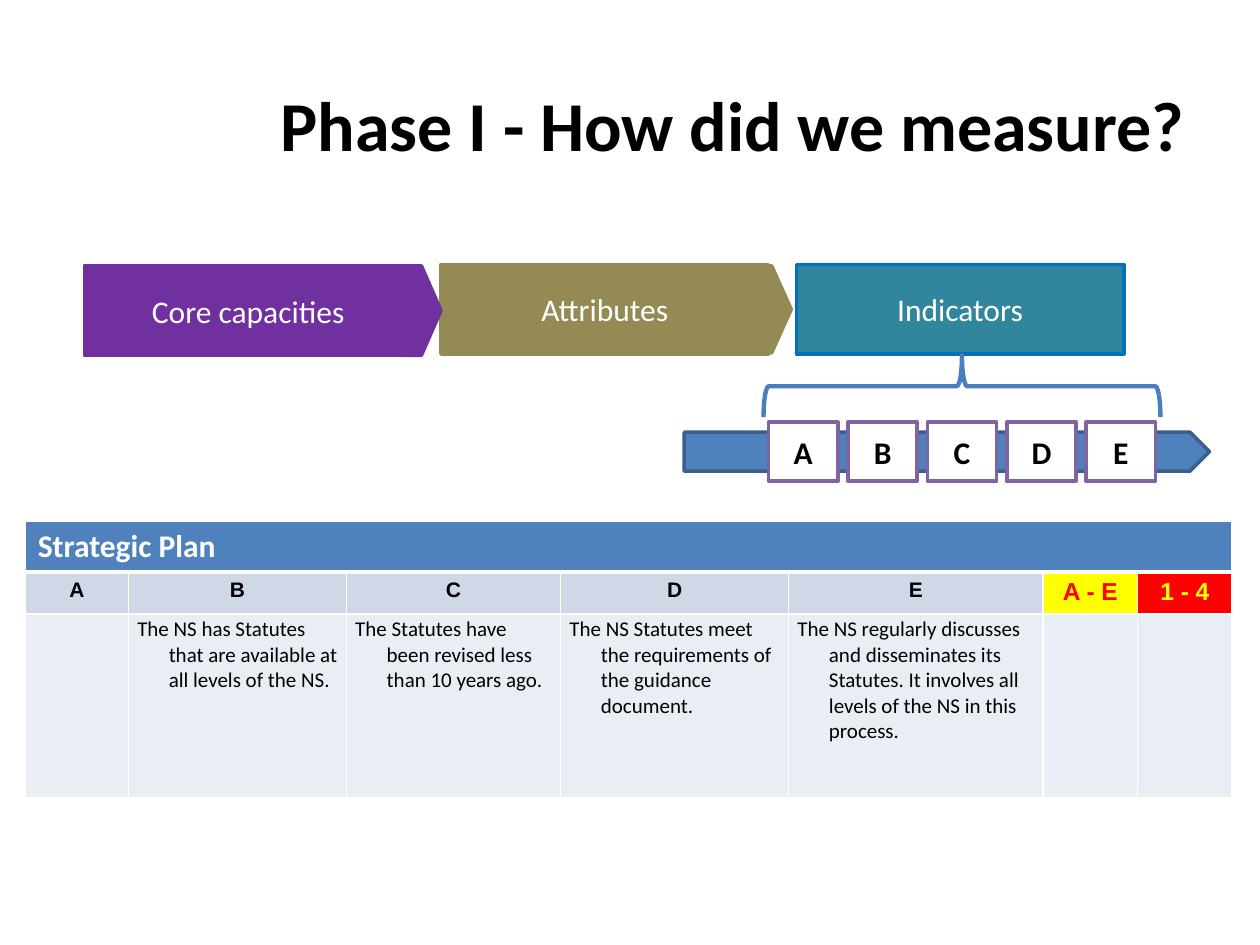
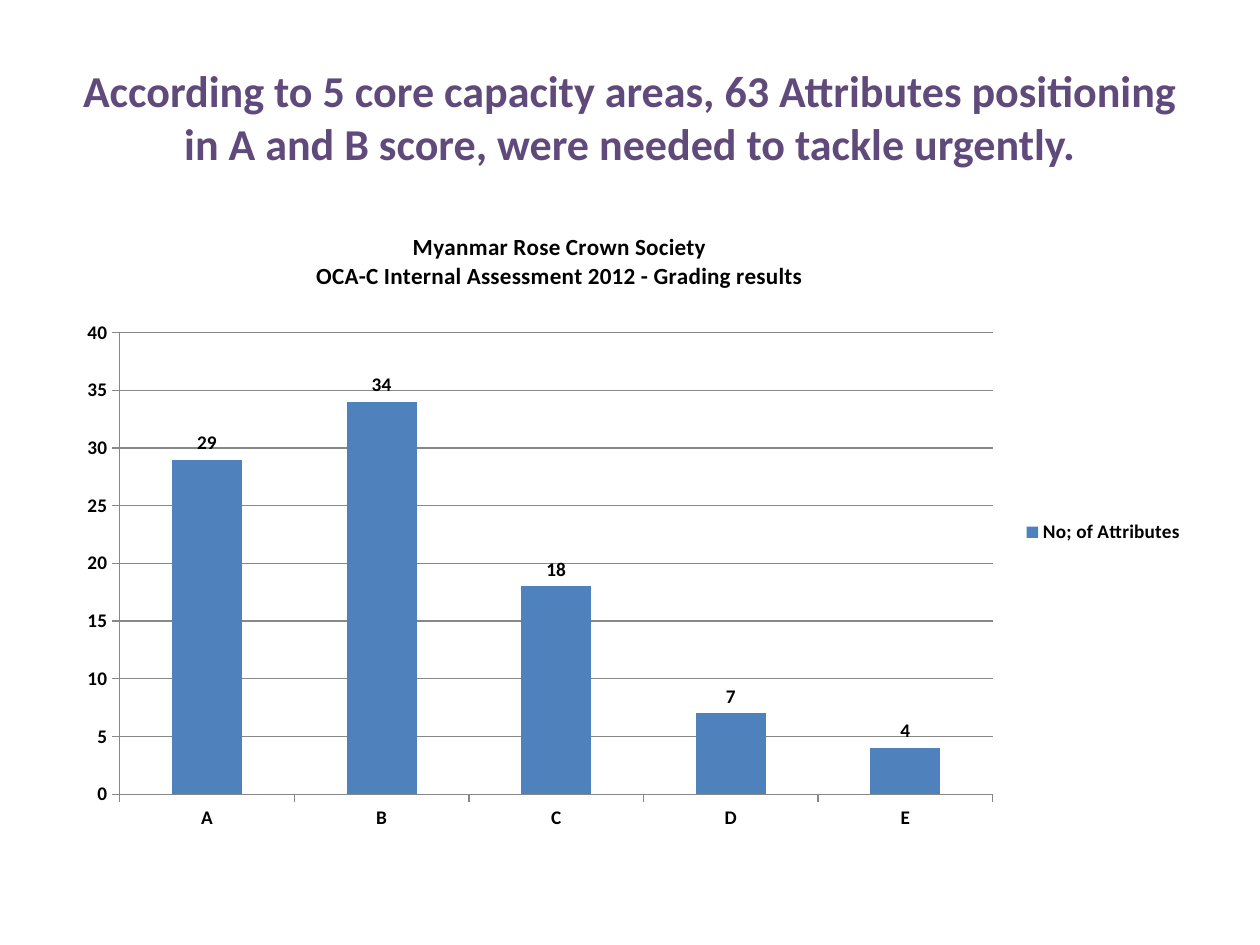
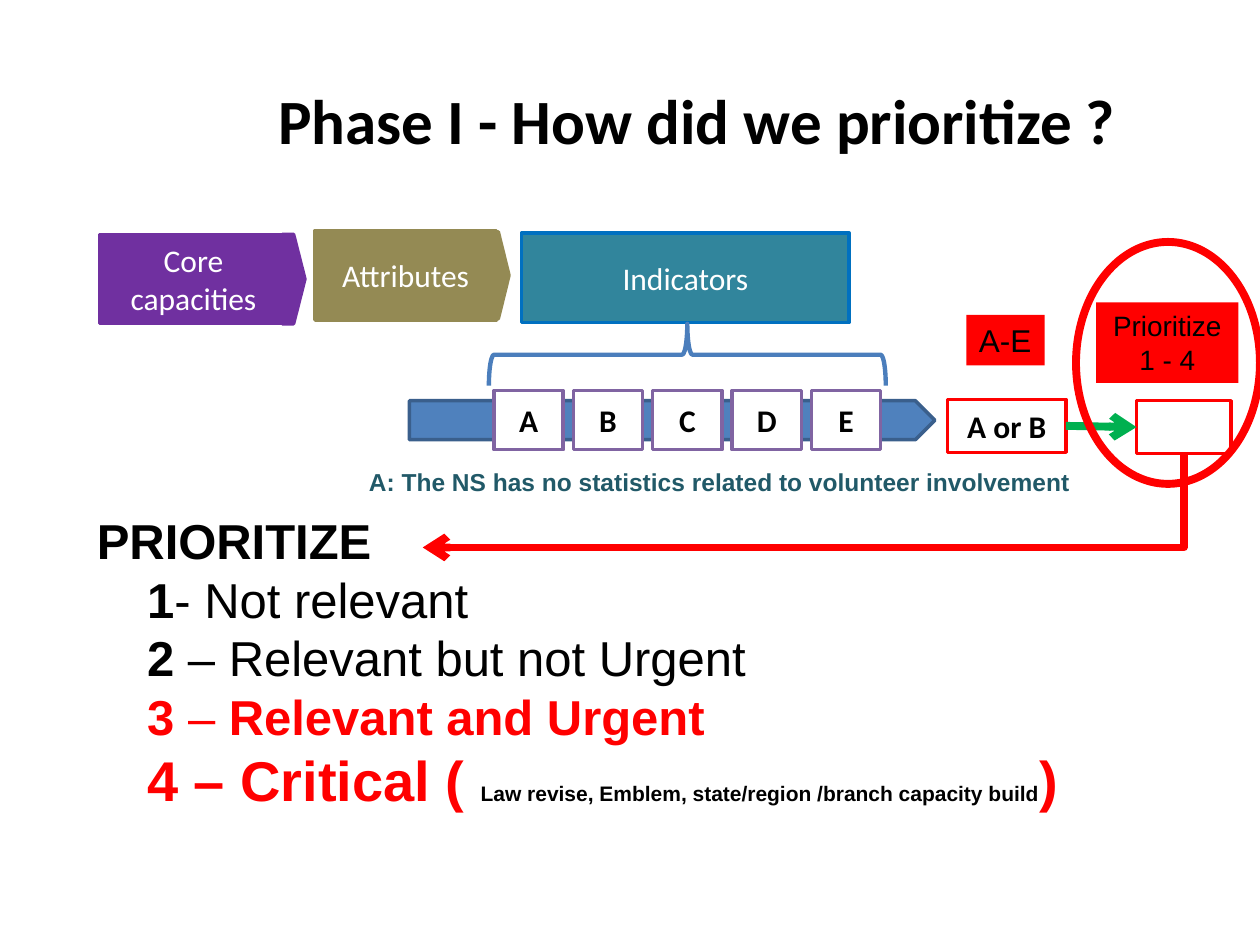
from lxml import etree
from pptx import Presentation
from pptx import util as u
from pptx.chart.data import CategoryChartData
from pptx.dml.color import RGBColor
from pptx.enum import chart as ch, shapes, text
from pptx.oxml import parse_xml
from pptx.oxml.ns import nsdecls, qn

# Shared style
BLACK, WHITE, RED, YELLOW = "000000", "FFFFFF", "FF0000", "FFFF00"
BLUE, NAVY, BRACE, GREY = "4F81BD", "3A5F8C", "4B7EBC", "878787"
PURPLE, OLIVE, TEAL, SKY = "7030A0", "948A54", "31859C", "0070C0"
VIOLET, PLUM, GREEN, DARK_TEAL = "8064A2", "604A7B", "00B050", "215968"
HEAD_FILL, BODY_FILL = "D0D8E8", "E9EDF4"
SANS, ARIAL = "Calibri", "Arial"
GRADES = "ABCDE"
MSO = shapes.MSO_SHAPE
CENTER, LEFT = text.PP_ALIGN.CENTER, text.PP_ALIGN.LEFT
TOP, MIDDLE = text.MSO_ANCHOR.TOP, text.MSO_ANCHOR.MIDDLE

# The grid has 100 columns and 75 rows on a 10 by 7.5 inch slide
COLS, ROWS = 100, 75
CELL = u.Inches(10) / COLS
STEP_H = 7.1


def grid(*lengths):
    return [u.Emu(round(n * CELL)) for n in lengths]


def rgb(value):
    return RGBColor.from_string(value)


def style_font(font, size, color=BLACK, bold=False, name=SANS):
    font.size, font.bold, font.name = u.Pt(size), bold, name
    font.color.rgb = rgb(color)


def indent(p, left, first=0):
    pPr = p._p.get_or_add_pPr()
    for key, n in (("marL", left), ("indent", first)):
        pPr.set(key, str(grid(n)[0]))


def cell_borders(cell, bottom=1):
    tcPr = cell._tc.get_or_add_tcPr()
    for i, (side, width) in enumerate(zip("LRTB", (1, 1, 1, bottom))):
        tcPr.insert(i, parse_xml(
            f'<a:ln{side} {nsdecls("a")} w="{u.Pt(width)}"><a:solidFill>'
            f'<a:srgbClr val="{WHITE}"/></a:solidFill></a:ln{side}>'))


def chart_layout(parent, index, inner=False, **shares):
    for old in parent.findall(qn("c:layout")):
        parent.remove(old)
    layout = etree.Element(qn("c:layout"))
    manual = etree.SubElement(layout, qn("c:manualLayout"))
    if inner:
        etree.SubElement(manual, qn("c:layoutTarget")).set("val", "inner")
    for key in "xy":
        etree.SubElement(manual, qn(f"c:{key}Mode")).set("val", "edge")
    for key, share in shares.items():
        etree.SubElement(manual, qn(f"c:{key}")).set("val", str(share))
    parent.insert(index, layout)


class Deck:
    def __init__(self):
        self.prs = Presentation()
        self.prs.slide_width, self.prs.slide_height = grid(COLS, ROWS)
        self.s = None

    def new_slide(self):
        self.s = self.prs.slides.add_slide(self.prs.slide_layouts[6])

    # Basic elements
    def shape(self, kind, x, y, w, h, fill=None, line=None, width=2):
        sp = self.s.shapes.add_shape(kind, *grid(x, y, w, h))
        sp.shadow.inherit = False
        if fill:
            sp.fill.solid()
            sp.fill.fore_color.rgb = rgb(fill)
        else:
            sp.fill.background()
        if line:
            sp.line.color.rgb = rgb(line)
            sp.line.width = u.Pt(width)
        else:
            sp.line.fill.background()
        return sp

    def label(self, sp, lines, size, color=BLACK, bold=False, name=SANS,
              align=CENTER, anchor=MIDDLE, wrap=True):
        tf = sp.text_frame
        tf.word_wrap, tf.vertical_anchor = wrap, anchor
        for i, line in enumerate(lines.split("\n")):
            p = tf.add_paragraph() if i else tf.paragraphs[0]
            p.text, p.alignment = line, align
            style_font(p.font, size, color, bold, name)

    def text_box(self, x, y, w, h):
        return self.s.shapes.add_textbox(*grid(x, y, w, h))

    def title(self, words, x, w, h, size):
        self.label(self.text_box(x, 6, w, h), words, size, bold=True,
                   align=LEFT, anchor=TOP, wrap=False)

    def arrow(self, kind, ends, color):
        sp = self.s.shapes.add_connector(kind, *grid(*ends))
        sp.line.color.rgb, sp.line.width = rgb(color), u.Pt(4.5)
        spPr = sp._element.spPr
        etree.SubElement(spPr.find(qn("a:ln")), qn("a:tailEnd")).set("type", "arrow")
        etree.SubElement(spPr, qn("a:effectLst"))
        return sp

    # Diagram parts
    def step(self, words, color, x, y, w, tip_x, tip_w, tip_h=STEP_H):
        body = self.shape(MSO.RECTANGLE, x, y, w, STEP_H, color, color)
        self.label(body, words, 18, WHITE)
        self.shape(MSO.PENTAGON, tip_x, y + (STEP_H - tip_h) / 2, tip_w, tip_h,
                   color, color)

    def grade_scale(self, x, y):
        """Indicators, a brace and the grades; x, y is the corner of grade A."""
        box_w, pitch = 5.5, 6.3
        center = x + (pitch * (len(GRADES) - 1) + box_w) / 2
        self.shape(MSO.PENTAGON, x - 6.7, y + 0.8, 41.7, 3.1, BLUE, NAVY)
        head = self.shape(MSO.RECTANGLE, x + 2.2, y - 12.5, 26, STEP_H, TEAL, SKY)
        self.label(head, "Indicators", 18, WHITE)
        for i, grade in enumerate(GRADES):
            box = self.shape(MSO.RECTANGLE, x + i * pitch, y, box_w, 4.7,
                             WHITE, VIOLET)
            self.label(box, grade, 18, bold=True)
        brace_w, brace_h = 4.9, 31.5
        brace = self.shape(MSO.RIGHT_BRACE, center - brace_w / 2,
                           y - 2.85 - brace_h / 2, brace_w, brace_h,
                           line=BRACE, width=2.5)
        brace.rotation = 270

    def table(self, x, y, widths, heights):
        frame = self.s.shapes.add_table(len(heights), len(widths),
                                        *grid(x, y, sum(widths), sum(heights)))
        table = frame.table
        table.first_row = table.horz_banding = False
        for column, length in zip(table.columns, grid(*widths)):
            column.width = length
        for row, length in zip(table.rows, grid(*heights)):
            row.height = length
        return table

    def cell(self, cell, words, fill, size=12, color=BLACK, bold=True,
             name=ARIAL, align=CENTER, bottom=1):
        cell.fill.solid()
        cell.fill.fore_color.rgb = rgb(fill)
        cell_borders(cell, bottom)
        if words:
            self.label(cell, words, size, color, bold, name, align, TOP)

    def column_chart(self, x, y, w, h, title, name, cats, vals):
        data = CategoryChartData()
        data.categories = cats
        data.add_series(name, vals)
        chart = self.s.shapes.add_chart(ch.XL_CHART_TYPE.COLUMN_CLUSTERED,
                                        *grid(x, y, w, h), data).chart
        style_font(chart.font, 11, bold=True)
        chart.has_title = chart.has_legend = True
        self.label(chart.chart_title, title, 13.2, bold=True)
        chart.legend.position = ch.XL_LEGEND_POSITION.RIGHT
        chart.legend.include_in_layout = False
        plot = chart.plots[0]
        plot.vary_by_categories, plot.gap_width = False, 150
        fill = plot.series[0].format.fill
        fill.solid()
        fill.fore_color.rgb = rgb(BLUE)
        plot.has_data_labels = True
        plot.data_labels.show_value = True
        plot.data_labels.position = ch.XL_LABEL_POSITION.OUTSIDE_END
        axes = chart.category_axis, chart.value_axis
        for axis in axes:
            axis.major_tick_mark = ch.XL_TICK_MARK.OUTSIDE
        for lined in (*axes, chart.value_axis.major_gridlines):
            lined.format.line.color.rgb = rgb(GREY)
        chart_layout(chart.chart_title._element, 1, x=0.22, y=0.01)
        area = chart._chartSpace.find(f".//{qn('c:plotArea')}")
        chart_layout(area, 0, inner=True, x=0.05, y=0.18, w=0.77, h=0.74)


def measure_slide(deck):
    deck.new_slide()
    deck.title("Phase I - How did we measure?", 21.3, 74.4, 7.7, 40)

    # Strategic plan table
    table = deck.table(2, 41.4, [8.2, 17.3, 17, 18.1, 20.2, 7.5, 7.5],
                       [3.75, 3.2, 14.6])
    table.cell(0, 0).merge(table.cell(0, 6))
    for i in range(7):
        deck.cell(table.cell(0, i), "" if i else "Strategic Plan", BLUE, 18, WHITE,
                  name=SANS, align=LEFT, bottom=3)
    for i, grade in enumerate(GRADES):
        deck.cell(table.cell(1, i), grade, HEAD_FILL)
    deck.cell(table.cell(1, 5), "A - E", YELLOW, 14, RED)
    deck.cell(table.cell(1, 6), "1 - 4", RED, 14, YELLOW)
    statutes = [
        "",
        "The NS has Statutes that are available at all levels of the NS.",
        "The Statutes have been revised less than 10 years ago.",
        "The NS Statutes meet the requirements of the guidance document.",
        "The NS regularly discusses and disseminates its Statutes. "
        "It involves all levels of the NS in this process.",
        "", ""]
    for i, words in enumerate(statutes):
        cell = table.cell(2, i)
        deck.cell(cell, words, BODY_FILL, bold=False, name=SANS, align=LEFT)
        if words:
            (cell.margin_left, cell.margin_top, cell.margin_right,
             cell.margin_bottom) = grid(0.7, 0.2, 0.7, 0)
            indent(cell.text_frame.paragraphs[0], 2.5, -2.5)

    # From capacities to indicators
    deck.step("Attributes", OLIVE, 35, 21, 26, 59.7, 3.1, 6.9)
    deck.step("Core capacities", PURPLE, 6.7, 21.1, 26, 31.9, 3.1)
    deck.grade_scale(61, 33.5)


def results_slide(deck):
    deck.new_slide()
    deck.label(deck.text_box(5, 3, 90, 12.5),
               "According to 5 core capacity areas, 63 Attributes positioning "
               "in A and B score, were needed to tackle urgently.",
               25.2, PLUM, True)
    deck.column_chart(5, 17.5, 90, 49.5,
                      "Myanmar Rose Crown Society\n"
                      "OCA-C Internal Assessment 2012 - Grading results",
                      "No; of Attributes", list(GRADES), [29, 34, 18, 7, 4])


def prioritize_slide(deck):
    deck.new_slide()

    # From capacities to indicators
    deck.grade_scale(39.2, 31)
    deck.step("Core capacities", PURPLE, 7.9, 18.6, 14.9, 22.4, 1.8)
    deck.step("Attributes", OLIVE, 25, 18.3, 14.4, 38.7, 1.7, 6.9)

    # Grade and its priority score
    grade = deck.shape(MSO.RECTANGLE, 75.2, 31.7, 9.4, 4.2, line=RED)
    deck.label(grade, "A or B", 18, bold=True)
    grade_range = deck.shape(MSO.RECTANGLE, 76.7, 25, 6.2, 4, RED)
    deck.label(grade_range, "A-E", 18, name=ARIAL, align=LEFT, anchor=TOP, wrap=False)
    score_range = deck.shape(MSO.RECTANGLE, 87, 24, 11.3, 6.4, RED)
    deck.label(score_range, "Prioritize\n1 - 4", 16, name=ARIAL, anchor=TOP)
    score = deck.shape(MSO.RECTANGLE, 90.2, 31.8, 7.5, 4.2, line=RED)
    link = deck.arrow(shapes.MSO_CONNECTOR.STRAIGHT, (84.6, 33.8, 90.2, 33.8), GREEN)
    link.begin_connect(grade, 3)
    link.end_connect(score, 1)

    # Priority levels; each run is text, size, colour, bold
    levels = [
        [("PRIORITIZE", 28, BLACK, True)],
        [("1", 28, BLACK, True), ("- Not relevant", 28, BLACK, False)],
        [("2", 28, BLACK, True), (" – Relevant but not Urgent", 28, BLACK, False)],
        [("3 ", 28, RED, True), ("– ", 28, RED, False),
         ("Relevant and Urgent", 28, RED, True)],
        [("4 – Critical ( ", 32, RED, True),
         ("Law revise, Emblem, state/region /branch capacity build", 12, BLACK, True),
         (")", 32, RED, True)]]
    tf = deck.text_box(6.7, 40, 81.7, 25.2).text_frame
    tf.word_wrap = False
    for i, runs in enumerate(levels):
        p = tf.add_paragraph() if i else tf.paragraphs[0]
        indent(p, 4 if i else 0)
        for words, *look in runs:
            r = p.add_run()
            r.text = words
            style_font(r.font, *look, name=ARIAL)

    # Turned one-bend arrow from the score down to the levels
    bend = deck.arrow(shapes.MSO_CONNECTOR.ELBOW, (60, 9.5, 67.5, 69.9), RED)
    spPr = bend._element.spPr
    spPr.find(qn("a:xfrm")).set("rot", str(90 * 60000))
    spPr.find(qn("a:prstGeom")).set("prst", "bentConnector2")

    deck.shape(MSO.OVAL, 85.4, 19.2, 14.6, 19.2, line=RED, width=4.5)
    deck.label(deck.text_box(28.3, 36.6, 58.3, 3.4),
               "A: The NS has no statistics related to volunteer involvement",
               14, DARK_TEAL, True, ARIAL, LEFT, TOP)
    deck.title("Phase I - How did we prioritize ?", 21.1, 69.3, 7.1, 36)


def main():
    deck = Deck()
    measure_slide(deck)
    results_slide(deck)
    prioritize_slide(deck)
    deck.prs.save("out.pptx")


if __name__ == "__main__":
    main()
